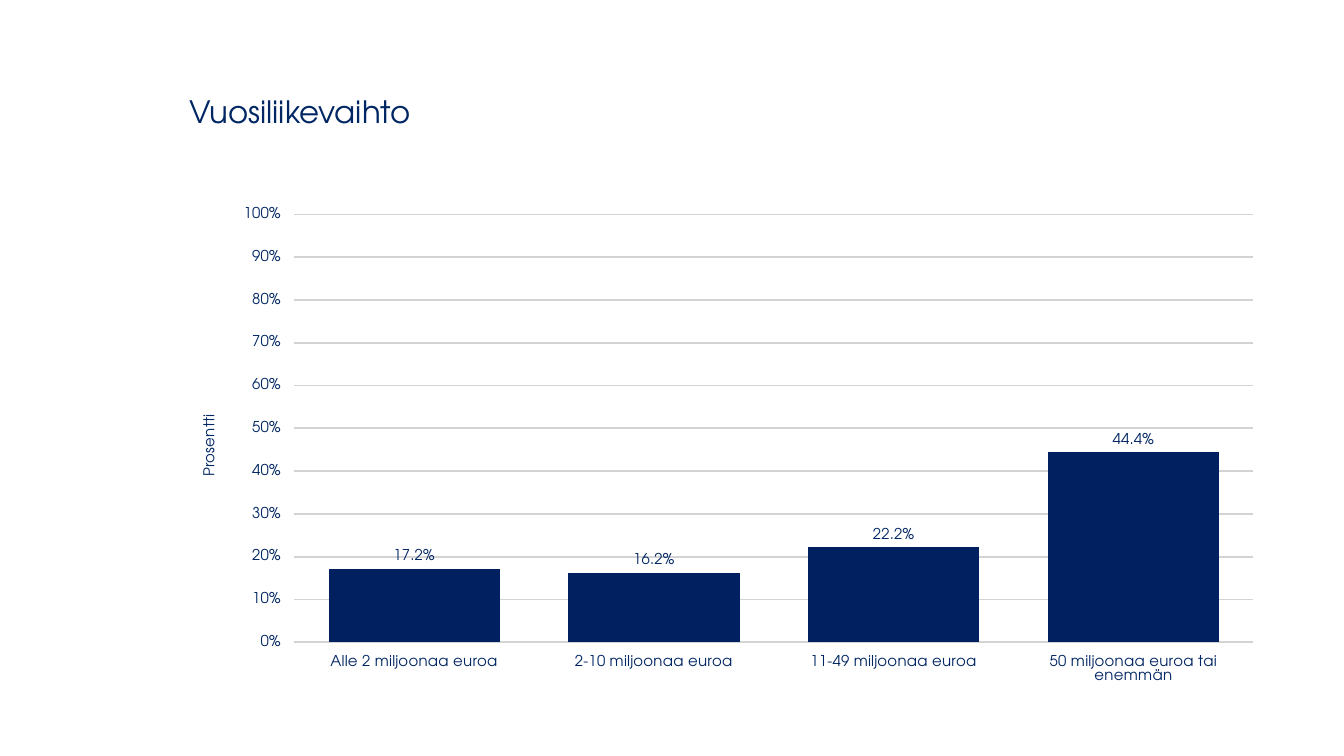
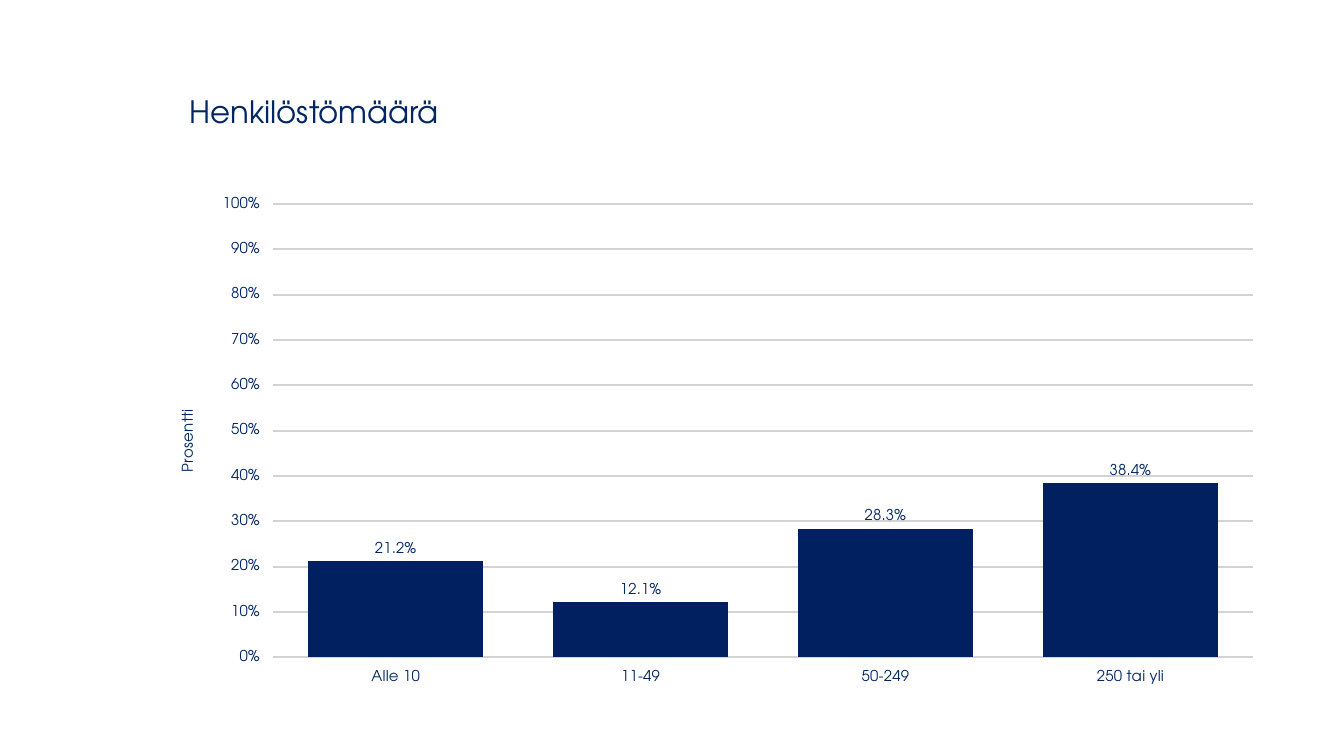
from typing import Any, NamedTuple

from pptx import Presentation
from pptx import util as u
from pptx.chart import data
from pptx.dml import color
from pptx.enum import chart as ch, text

FACE = "TeX Gyre Adventor"
INK, BAR, GRID = "002663", "002060", "D3D3D3"
WIDE = 10


class Page(NamedTuple):
    """One slide: its heading, the chart box in inches and the bars."""
    title: str
    box: tuple[float, float, float, float]
    bars: dict[str, float]


PAGES = [
    Page("Vuosiliikevaihto", (1.3, 1.47, 8.19, 3.69), {
        "Alle 2 miljoonaa euroa": 0.172,
        "2-10 miljoonaa euroa": 0.162,
        "11-49 miljoonaa euroa": 0.222,
        "50 miljoonaa euroa tai enemmän": 0.444,
    }),
    Page("Henkilöstömäärä", (1.14, 1.39, 8.35, 3.78), {
        "Alle 10": 0.212,
        "11-49": 0.121,
        "50-249": 0.283,
        "250 tai yli": 0.384,
    }),
]


def rgb(code: str) -> color.RGBColor:
    """Turn a hex string into a colour."""
    return color.RGBColor.from_string(code)


def apply(item: Any, **vals: Any) -> None:
    """Set each named value on the item."""
    for name, val in vals.items():
        setattr(item, name, val)


def style(font: Any, size: float) -> None:
    """Give a font the shared face and colour."""
    apply(font, name=FACE, size=u.Pt(size), bold=False)
    font.color.rgb = rgb(INK)


def place(item: Any, box: tuple[float, ...]) -> None:
    """Move an item to a box given in inches."""
    apply(item, **dict(zip(("left", "top", "width", "height"), map(u.Inches, box))))


def add_title(slide: Any, words: str) -> None:
    """Fill and format the title placeholder."""
    title = slide.shapes.title
    place(title, (1.31, 0.3, 7.95, 1.09))
    frame = title.text_frame
    frame.text = words
    apply(frame, word_wrap=True, auto_size=text.MSO_AUTO_SIZE.NONE,
          vertical_anchor=text.MSO_ANCHOR.MIDDLE)
    para = frame.paragraphs[0]
    apply(para, alignment=text.PP_ALIGN.LEFT, line_spacing=0.9)
    style(para.runs[0].font, 16.5)


def format_axes(chart: Any) -> None:
    """Format both axes, the grid and the axis title."""
    cat, val = chart.category_axis, chart.value_axis
    for axis in (cat, val):
        apply(axis, major_tick_mark=ch.XL_TICK_MARK.OUTSIDE,
              minor_tick_mark=ch.XL_TICK_MARK.NONE)
        axis.format.line.fill.background()
        style(axis.tick_labels.font, 8)
    apply(val, minimum_scale=0, maximum_scale=1, major_unit=0.1,
          has_major_gridlines=True)
    apply(val.tick_labels, number_format="0%", number_format_is_linked=False)
    line = val.major_gridlines.format.line
    line.width = u.Pt(1)
    line.color.rgb = rgb(GRID)
    frame = val.axis_title.text_frame
    frame.text = "Prosentti"
    style(frame.paragraphs[0].runs[0].font, 8)


def add_bars(slide: Any, page: Page) -> None:
    """Draw the column chart of a page."""
    feed = data.CategoryChartData(number_format="0.0%")
    feed.categories = list(page.bars)
    feed.add_series("Series 1", list(page.bars.values()))
    chart = slide.shapes.add_chart(
        ch.XL_CHART_TYPE.COLUMN_CLUSTERED, *map(u.Inches, page.box), feed).chart
    apply(chart, has_legend=False, has_title=False)
    style(chart.font, 18)
    format_axes(chart)
    plot = chart.plots[0]
    apply(plot, gap_width=40, overlap=-2, vary_by_categories=False)
    bars = plot.series[0]
    bars.format.fill.solid()
    bars.format.fill.fore_color.rgb = rgb(BAR)
    tags = bars.data_labels
    apply(tags, show_value=True, number_format="0.0%", number_format_is_linked=False,
          position=ch.XL_LABEL_POSITION.OUTSIDE_END)
    style(tags.font, 8)


def main() -> None:
    """Build and save the deck."""
    deck = Presentation()
    apply(deck, slide_width=u.Inches(WIDE), slide_height=u.Inches(WIDE * 9 / 16))
    for page in PAGES:
        slide = deck.slides.add_slide(deck.slide_layouts[5])
        add_title(slide, page.title)
        add_bars(slide, page)
    deck.save("out.pptx")


if __name__ == "__main__":
    main()
